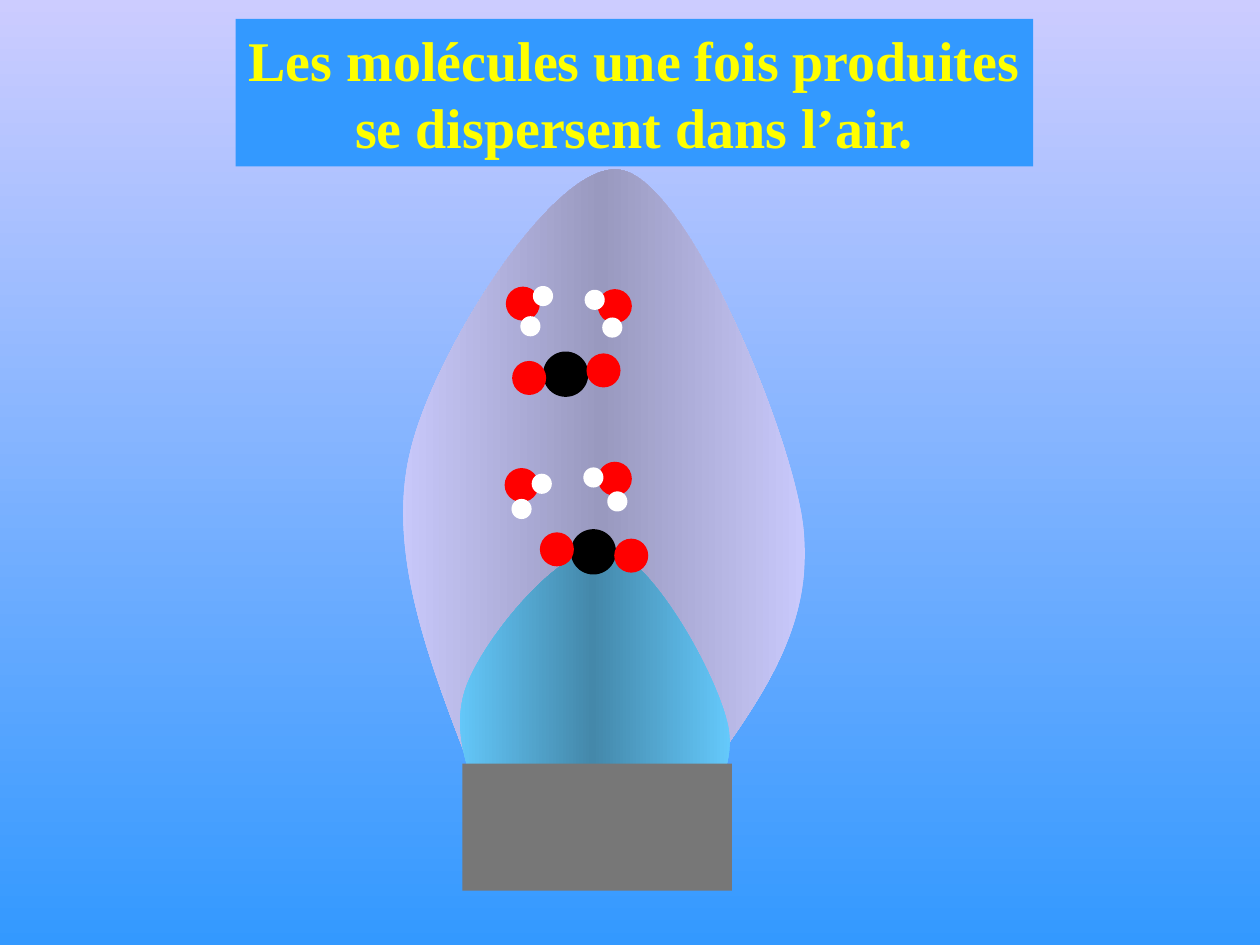
"""Build a slide of a flame whose molecules disperse into the air."""
from copy import deepcopy

from pptx import Presentation
from pptx import util as u
from pptx.dml.color import RGBColor
from pptx.enum import shapes, text
from pptx.oxml import ns, xmlchemy

COLORS = {
    "sky_top": "CCCCFF", "sky": "3399FF", "title": "FFFF00", "burner": "777777",
    "outer": "CCCCFF", "outer_mid": "9999BF", "inner": "66CCFF", "inner_mid": "4488AA",
    "carbon": "000000", "oxygen": "FF0000", "hydrogen": "FFFFFF",
}
TITLE = ["Les molécules une fois produites", "se dispersent dans l’air."]
TITLE_BOX = (1.87, 0.15, 6.33, 1.17)
BURNER_BOX = (3.67, 6.06, 2.14, 1.01)
FLAMES = [
    ("outer", [
        (3.73, 6.09),
        (3.4, 5.23), (3.06, 4.36), (3.26, 3.57),
        (3.45, 2.78), (4.42, 1.25), (4.93, 1.35),
        (5.44, 1.44), (6.25, 3.34), (6.37, 4.14),
        (6.48, 4.93), (6.06, 5.51), (5.65, 6.09)]),
    ("inner", [
        (4.01, 6.77),
        (3.79, 6.33), (3.56, 5.89), (3.69, 5.48),
        (3.82, 5.08), (4.47, 4.3), (4.81, 4.35),
        (5.16, 4.4), (5.7, 5.37), (5.78, 5.77),
        (5.85, 6.17), (5.57, 6.47), (5.29, 6.77)]),
]
DIAMETERS = {"carbon": 0.36, "oxygen": 0.27, "hydrogen": 0.16}
CARBON_DIOXIDE = ("carbon", "oxygen", "oxygen")
WATER = ("oxygen", "hydrogen", "hydrogen")
MOLECULES = [
    (CARBON_DIOXIDE, [(4.71, 4.38), (4.42, 4.36), (5.01, 4.41)]),
    (WATER, [(4.88, 3.8), (4.71, 3.79), (4.9, 3.98)]),
    (WATER, [(4.14, 3.85), (4.14, 4.04), (4.3, 3.84)]),
    (CARBON_DIOXIDE, [(4.49, 2.97), (4.2, 3), (4.79, 2.94)]),
    (WATER, [(4.88, 2.43), (4.72, 2.38), (4.86, 2.6)]),
    (WATER, [(4.15, 2.41), (4.21, 2.59), (4.31, 2.35)]),
]


def rgb(name):
    return RGBColor.from_string(COLORS[name])


def paint(sp, color):
    sp.shadow.inherit = False
    sp.line.fill.background()
    sp.fill.solid()
    sp.fill.fore_color.rgb = rgb(color)


def add_filled(parent, kind, box, color):
    sp = parent.add_shape(kind, *map(u.Inches, box))
    paint(sp, color)


def write(tf, lines, size, color, font, bold=False, align=text.PP_ALIGN.CENTER):
    for i, line in enumerate(lines):
        p = tf.paragraphs[0] if i == 0 else tf.add_paragraph()
        p.alignment = align
        r = p.add_run()
        r.text = line
        r.font.size, r.font.bold, r.font.name = u.Pt(size), bold, font
        r.font.color.rgb = rgb(color)


def blend(fill, first, last, angle):
    fill.gradient()
    fill.gradient_angle = angle
    for stop, color, position in zip(fill.gradient_stops, (first, last), (0, 1)):
        stop.color.rgb = rgb(color)
        stop.position = position


def bend(sp):
    lines = sp._element.xpath(".//a:lnTo")
    for i in range(0, len(lines), 3):
        curve = xmlchemy.OxmlElement("a:cubicBezTo")
        lines[i].addprevious(curve)
        for line in lines[i:i + 3]:
            curve.append(line.find(ns.qn("a:pt")))
            line.getparent().remove(line)


def add_flame(s, color, points):
    start, *others = [tuple(map(u.Inches, point)) for point in points]
    builder = s.shapes.build_freeform(*start)
    builder.add_line_segments(others, close=False)
    sp = builder.convert_to_shape()
    bend(sp)
    paint(sp, color)
    blend(sp.fill, color, color, 0)
    first = sp._element.xpath(".//a:gs")[0]
    first.addnext(deepcopy(first))
    middle = sp.fill.gradient_stops[1]
    middle.position = 0.5
    middle.color.rgb = rgb(color + "_mid")


def add_molecule(s, atoms, centres):
    group = s.shapes.add_group_shape()
    for atom, (x, y) in zip(atoms, centres):
        d = DIAMETERS[atom]
        add_filled(group.shapes, shapes.MSO_SHAPE.OVAL, (x - d / 2, y - d / 2, d, d), atom)


def add_title(s):
    sp = s.shapes.title
    sp.left, sp.top, sp.width, sp.height = map(u.Inches, TITLE_BOX)
    sp.fill.solid()
    sp.fill.fore_color.rgb = rgb("sky")
    tf = sp.text_frame
    tf.word_wrap = False
    tf.auto_size = text.MSO_AUTO_SIZE.NONE
    tf.vertical_anchor = text.MSO_ANCHOR.TOP
    write(tf, TITLE, size=32, color="title", font="Times New Roman", bold=True)


def main():
    prs = Presentation()
    prs.slide_width, prs.slide_height = u.Inches(10), u.Inches(7.5)
    s = prs.slides.add_slide(prs.slide_layouts[5])
    blend(s.background.fill, "sky_top", "sky", 270)
    for flame in FLAMES:
        add_flame(s, *flame)
    add_filled(s.shapes, shapes.MSO_SHAPE.RECTANGLE, BURNER_BOX, "burner")
    add_title(s)
    for molecule in MOLECULES:
        add_molecule(s, *molecule)
    prs.save("out.pptx")


if __name__ == "__main__":
    main()
